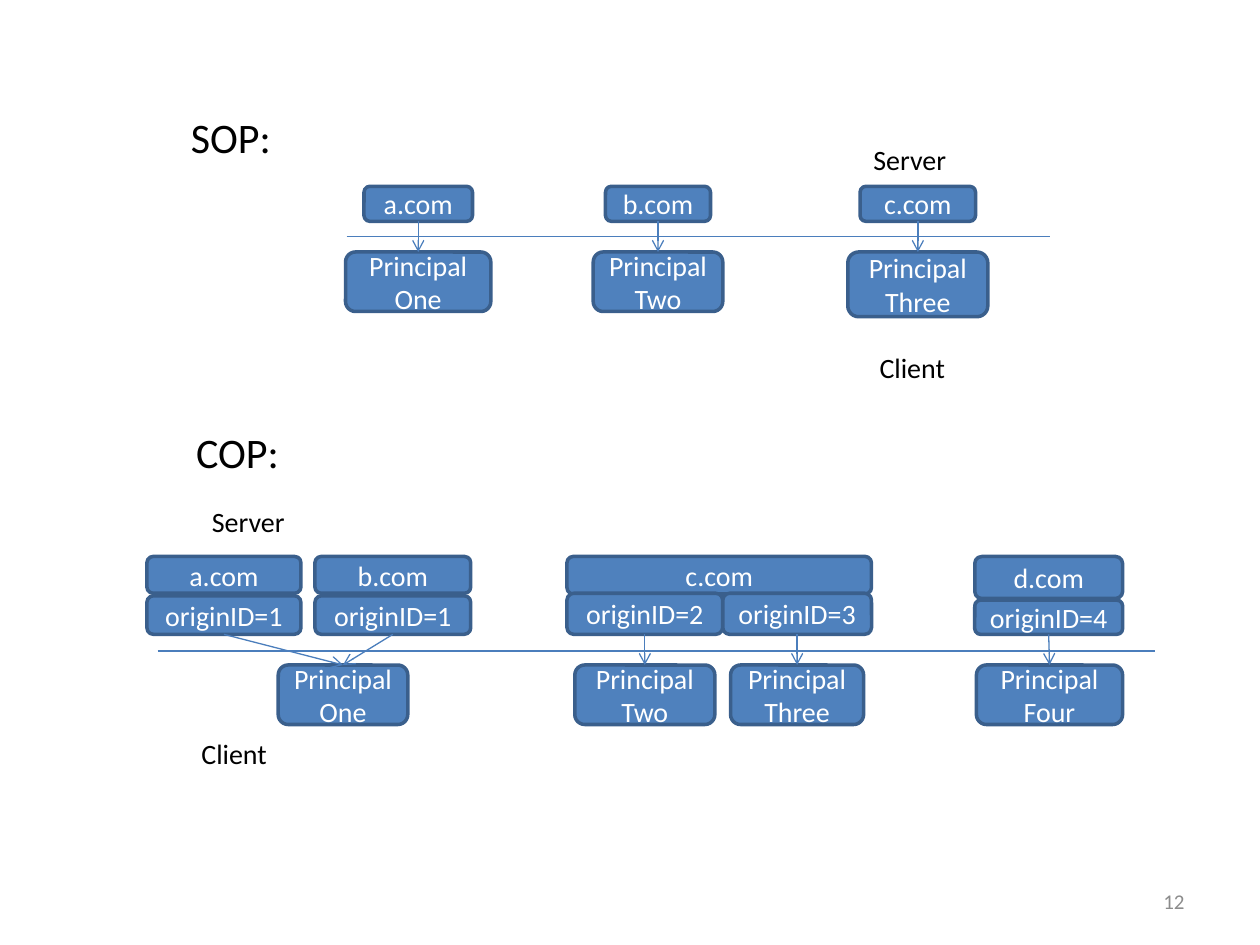
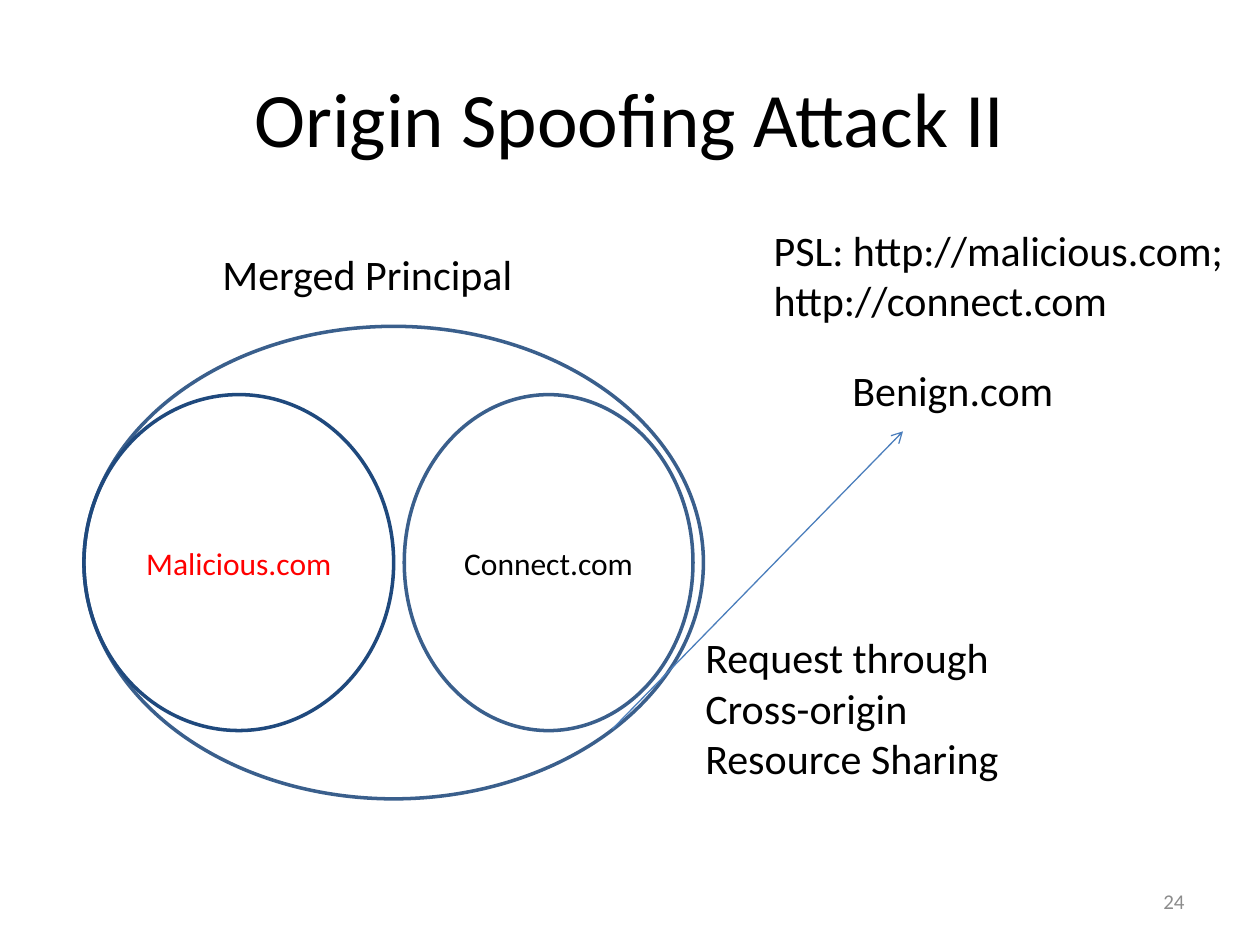
import pptx
import pptx.util
import pptx.dml.color
import pptx.enum.shapes
import pptx.enum.text
import pptx.oxml
import pptx.oxml.ns
from dataclasses import dataclass

Pt = pptx.util.Pt
Kind = pptx.enum.shapes.MSO_SHAPE
Join = pptx.enum.shapes.MSO_CONNECTOR
Align = pptx.enum.text.PP_ALIGN
Mid = pptx.enum.text.MSO_ANCHOR.MIDDLE


@dataclass(frozen=True)
class Theme:
    """Colours, font and type sizes of the deck."""
    face: str = "Calibri"
    fill: str = "4F81BD"
    edge: str = "3A5F8C"
    navy: str = "1F497D"
    wire: str = "4B7EBC"
    white: str = "FFFFFF"
    ink: str = "000000"
    gray: str = "8C8C8C"
    alert: str = "FF0000"
    title: int = 44
    head: int = 24
    name: int = 18
    node: int = 16
    foot: int = 12
    bold: float = 2
    thin: float = 0.75


T = Theme()


def rgb(code):
    """Turn a hex code into a colour."""
    return pptx.dml.color.RGBColor.from_string(code)


def write(shape, text, size, tint, align=Align.CENTER, anchor=Mid):
    """Put one styled paragraph in a shape."""
    frame = shape.text_frame
    frame.word_wrap = True
    frame.vertical_anchor = anchor
    para = frame.paragraphs[0]
    para.text = text
    para.alignment = align
    para.font.name = T.face
    para.font.size = Pt(size)
    para.font.color.rgb = rgb(tint)


def label(slide, box, text, size, tint=T.ink, align=Align.LEFT,
          anchor=pptx.enum.text.MSO_ANCHOR.TOP):
    """Add a text box."""
    shape = slide.shapes.add_textbox(*map(Pt, box))
    write(shape, text, size, tint, align, anchor)


def form(slide, kind, box, edge=T.edge, fill=None):
    """Add an outlined shape, filled or hollow."""
    shape = slide.shapes.add_shape(kind, *map(Pt, box))
    shape.shadow.inherit = False
    if fill:
        shape.fill.solid()
        shape.fill.fore_color.rgb = rgb(fill)
    else:
        shape.fill.background()
    shape.line.color.rgb = rgb(edge)
    shape.line.width = Pt(edge and T.bold)
    return shape


def node(slide, box, text):
    """Add a blue rounded box with its name."""
    shape = form(slide, Kind.ROUNDED_RECTANGLE, box, fill=T.fill)
    write(shape, text, T.node, T.white)
    return shape


def line(slide, start, end, arrow=False):
    """Add a thin line, with an arrowhead at its end on request."""
    link = slide.shapes.add_connector(Join.STRAIGHT, *map(Pt, start + end))
    link.line.color.rgb = rgb(T.wire)
    link.line.width = Pt(T.thin)
    make = pptx.oxml.ns.qn
    if arrow:
        tail = link.line._get_or_add_ln().makeelement(make("a:tailEnd"), {"type": "arrow"})
        link.line._get_or_add_ln().append(tail)
    props = link._element.spPr
    props.append(props.makeelement(make("a:effectLst"), {}))
    return link


def tie(slide, upper, lower):
    """Join the foot of one node to the top of another."""
    link = line(slide, (0, 0), (0, 0), arrow=True)
    link.begin_connect(upper, 2)
    link.end_connect(lower, 0)


def title(slide, text):
    """Add the slide title."""
    label(slide, (36, 21.6, 648, 90), text, T.title, align=Align.CENTER, anchor=Mid)


def footer(slide, number):
    """Add the slide number."""
    label(slide, (516, 500.4, 168, 28.8), str(number), T.foot, T.gray, Align.RIGHT, Mid)


def tags(slide, box, head, server, client):
    """Add the heading and side names of a policy."""
    left, top = box[:2]
    label(slide, (left + head[1], top, 76, 36), head[0], T.head)
    for text, (x, y), wide in (("Server", server, 62), ("Client", client, 57)):
        label(slide, (left + x, top + y, wide, 26.5), text, T.node)


def sop(slide, box):
    """Draw one principal for each host."""
    left, top, wide, high = box
    tags(slide, box, ("SOP:", 0), (390, 18), (393.5, high - 27))
    line(slide, (left + 96, top + 75), (left + wide, top + 75))
    rows = (("a.com", "One", 137, 62, 83, 34),
            ("b.com", "Two", 274, 60, 74, 34),
            ("c.com", "Three", 422.5, 66, 80, 37))
    for host, name, mid, span, base, tall in rows:
        mid += left
        upper = node(slide, (mid - span / 2, top + 46.5, span, 20), host)
        lower = node(slide, (mid - base / 2, top + 84, base, tall), f"Principal {name}")
        tie(slide, upper, lower)


def cop(slide, box):
    """Draw principals chosen by origin ID."""
    left, top, wide, high = box
    tags(slide, box, ("COP:", 21), (30, 45), (24, high - 26.5))
    homes = [node(slide, (left + x, top + 140, span, 34), f"Principal {name}")
             for name, x, span in (("One", 75, 74), ("Two", 244.5, 80),
                                   ("Three", 333.5, 76), ("Four", 474, 83.5))]
    sites = (("a.com", 0, 21, 100.5, ((1, 88),)),
             ("b.com", 96, 21, 100.5, ((1, 89),)),
             ("c.com", 240, 21.5, 99, ((2, 89), (3, 85))),
             ("d.com", 473, 24, 103, ((4, 84.5),)))
    for host, x, tall, under, marks in sites:
        span = sum(part for _, part in marks)
        node(slide, (left + x, top + 78, span, tall), host)
        for mark, part in marks:
            place = (left + x, top + under, part, 122.5 - under)
            tie(slide, node(slide, place, f"originID={mark}"), homes[mark - 1])
            x += part
    line(slide, (left + 6, top + 132), (left + wide, top + 132))


def spoof(slide, box):
    """Draw the merged principal and its request to a benign host."""
    left, top = box[:2]
    form(slide, Kind.OVAL, (left, top + 62, 354, 270))
    for text, x, span, edge, tint in (("Malicious.com", 0, 177, T.navy, T.alert),
                                      ("Connect.com", 183, 165, T.edge, T.ink)):
        oval = form(slide, Kind.OVAL, (left + x, top + 101, span, 192), edge)
        write(oval, text, T.name, tint)
    line(slide, (left + 302, top + 292), (left + 468, top + 122), arrow=True)
    notes = (("Merged Principal", 72, 14, 217.5, 36),
             ("Benign.com", 432, 80.5, 210, 36),
             ("Request through Cross-origin Resource Sharing", 348, 233, 210, 94),
             ("PSL: http://malicious.com; http://connect.com", 387, 0, 276, 65.5))
    for text, x, y, span, tall in notes:
        label(slide, (left + x, top + y, span, tall), text, T.head)


def main():
    """Build the deck and save it."""
    deck = pptx.Presentation()
    deck.slide_width, deck.slide_height = Pt(720), Pt(540)
    blank = deck.slide_layouts[6]

    slide = deck.slides.add_slide(blank)
    sop(slide, (102, 60, 498, 164))
    cop(slide, (84, 240, 576, 204))
    footer(slide, 12)

    slide = deck.slides.add_slide(blank)
    title(slide, "Origin Spoofing Attack II")
    spoof(slide, (48, 124.5, 663, 332))
    footer(slide, 24)

    deck.save("out.pptx")


if __name__ == "__main__":
    main()
